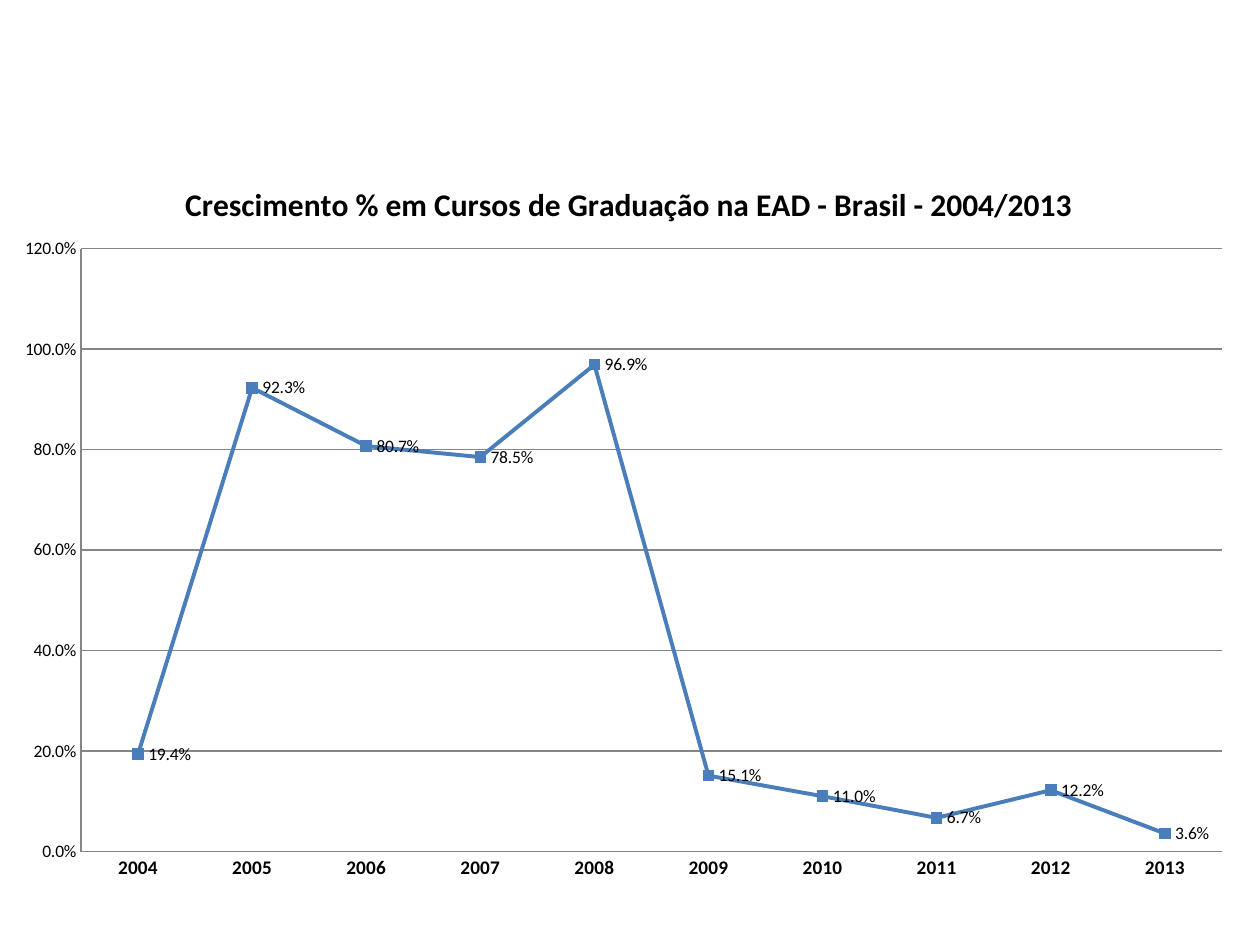
from lxml import etree
from pptx import Presentation
from pptx import util as u
from pptx.chart.data import CategoryChartData
from pptx.dml.color import RGBColor
from pptx.enum import chart as ch
from pptx.oxml.ns import qn

PX = 914400 // 126
BLUE = RGBColor(0x4F, 0x81, 0xBD)
LINE_BLUE = RGBColor(0x4A, 0x7E, 0xBB)
GREY = RGBColor(0x86, 0x86, 0x86)
BLACK = RGBColor(0, 0, 0)
CHART_LEFT, CHART_TOP, CHART_WIDTH, CHART_HEIGHT = 0, 145, 1247, 751


def set_layout(parent, index, **settings):
    """Give a chart part a manual layout, as its child number index."""
    for old in parent.findall(qn("c:layout")):
        parent.remove(old)
    layout = etree.Element(qn("c:layout"))
    parent.insert(index, layout)
    manual = etree.SubElement(layout, qn("c:manualLayout"))
    for name, value in settings.items():
        etree.SubElement(manual, qn("c:" + name)).set("val", str(value))


presentation = Presentation()
presentation.slide_width = u.Inches(10)
presentation.slide_height = u.Inches(7.5)
slide = presentation.slides.add_slide(presentation.slide_layouts[6])

# Growth data
growth = CategoryChartData(number_format="0.0%")
growth.categories = [str(year) for year in range(2004, 2014)]
growth.add_series("Series 1", (0.194, 0.923, 0.807, 0.785, 0.969,
                               0.151, 0.110, 0.067, 0.122, 0.036))
chart = slide.shapes.add_chart(
    ch.XL_CHART_TYPE.LINE_MARKERS, CHART_LEFT * PX, CHART_TOP * PX,
    CHART_WIDTH * PX, CHART_HEIGHT * PX, growth).chart
chart.has_legend = False
chart.font.name = "Calibri"
chart.font.size = u.Pt(10)
chart.font.color.rgb = BLACK

# Chart title
chart.has_title = True
paragraph = chart.chart_title.text_frame.paragraphs[0]
run = paragraph.add_run()
run.text = "Crescimento % em Cursos de Graduação na EAD - Brasil - 2004/2013"
run.font.name = "Calibri"
run.font.size = u.Pt(18)
run.font.bold = True
run.font.color.rgb = BLACK
set_layout(chart.chart_title._element, 1, xMode="edge", yMode="edge",
           x=round(180 / CHART_WIDTH, 3), y=round(32 / CHART_HEIGHT, 3))

# Plot area
set_layout(chart._chartSpace.chart.plotArea, 0, layoutTarget="inner",
           xMode="edge", yMode="edge",
           x=round(81 / CHART_WIDTH, 3), y=round(104 / CHART_HEIGHT, 3),
           w=round(1141 / CHART_WIDTH, 3), h=round(603 / CHART_HEIGHT, 3))

# Axes
for axis in (chart.category_axis, chart.value_axis):
    axis.major_tick_mark = ch.XL_TICK_MARK.NONE
    axis.minor_tick_mark = ch.XL_TICK_MARK.NONE
    axis.format.line.color.rgb = GREY
    axis.format.line.width = u.Pt(0.75)
chart.category_axis.tick_labels.font.size = u.Pt(11)
chart.category_axis.tick_labels.font.bold = True

value_axis = chart.value_axis
value_axis.minimum_scale = 0
value_axis.maximum_scale = 1.2
value_axis.major_unit = 0.2
value_axis.tick_labels.number_format = "0.0%"
value_axis.tick_labels.number_format_is_linked = False
value_axis.has_major_gridlines = True
value_axis.major_gridlines.format.line.color.rgb = GREY
value_axis.major_gridlines.format.line.width = u.Pt(0.75)

# Line, markers and labels
plot = chart.plots[0]
plot.vary_by_categories = False
series = plot.series[0]
series.smooth = False
series.format.line.color.rgb = LINE_BLUE
series.format.line.width = u.Pt(2.25)
series.marker.style = ch.XL_MARKER_STYLE.SQUARE
series.marker.size = 6
series.marker.format.fill.solid()
series.marker.format.fill.fore_color.rgb = BLUE
series.marker.format.line.color.rgb = LINE_BLUE
labels = series.data_labels
labels.show_value = True
labels.number_format = "0.0%"
labels.number_format_is_linked = False
labels.position = ch.XL_LABEL_POSITION.RIGHT
labels.font.size = u.Pt(10)
labels.font.color.rgb = BLACK

presentation.save("out.pptx")
